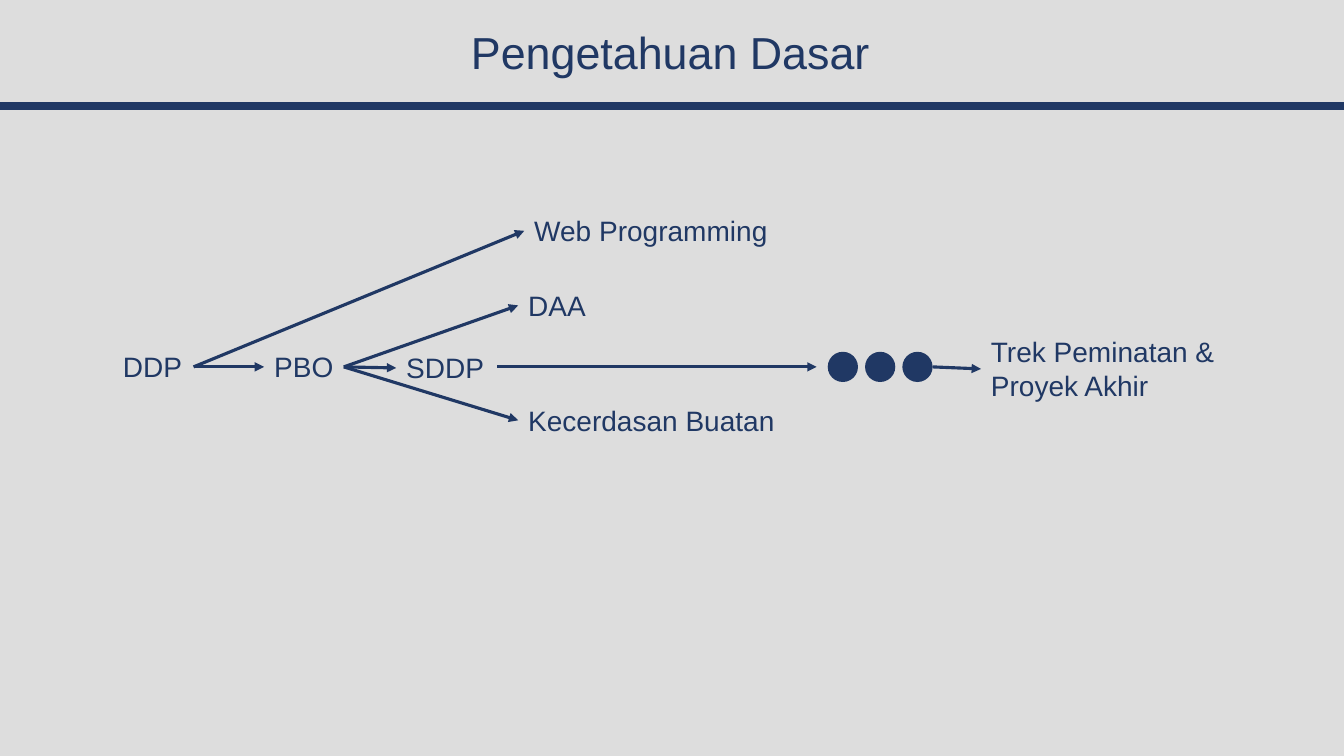
import dataclasses

import pptx
import pptx.dml.color
import pptx.enum.shapes
import pptx.enum.text
import pptx.oxml.xmlchemy
import pptx.slide
import pptx.util

PX = 9144  # 100 px to the inch
NAVY, GREY = "203864", "DDDDDD"
W, H = 1333, 750
AXIS = 364  # height of the main course path
DOT, DOT_STEP, DOT_LEFT = 30, 37, 821


@dataclasses.dataclass
class Label:
    text: str
    x: int
    y: int
    w: int
    h: int = 44


@dataclasses.dataclass
class Link:
    x1: int
    y1: int
    x2: int
    y2: int
    width: float = 2.25
    arrow: bool = True


TITLE = Label("Pengetahuan Dasar", 40, 20, 1250, 70)
COURSES = [
    Label("DDP", 112, 342, 80),
    Label("PBO", 262, 342, 79),
    Label("SDDP", 393, 343, 98),
    Label("DAA", 514, 281, 78),
    Label("Web Programming", 520, 207, 253),
    Label("Kecerdasan Buatan", 514, 395, 267),
    Label("Trek Peminatan &\nProyek Akhir", 973, 327, 244, 77),
]
LINKS = [
    Link(0, 105, W, 105, 6, False),
    Link(192, AXIS, 520, 229),
    Link(192, AXIS, 262, AXIS),
    Link(341, AXIS, 393, AXIS + 1),
    Link(341, AXIS, 514, 303),
    Link(341, AXIS, 514, 417),
    Link(493, AXIS, 810, AXIS),
    Link(925, AXIS, 973, 366),
]


def px(n: int) -> pptx.util.Emu:
    return pptx.util.Emu(n * PX)


def rgb(value: str) -> pptx.dml.color.RGBColor:
    return pptx.dml.color.RGBColor.from_string(value)


def add_label(
    slide: pptx.slide.Slide, label: Label, size: int, frame: dict, para: dict
) -> None:
    """Add a text box, with formats for its frame and for each paragraph."""
    sp = slide.shapes.add_textbox(*map(px, (label.x, label.y, label.w, label.h)))
    tf = sp.text_frame
    tf.text = label.text
    for name, value in frame.items():
        setattr(tf, name, value)
    for p in tf.paragraphs:
        for name, value in para.items():
            setattr(p, name, value)
        for r in p.runs:
            for name, value in {"name": "Arial", "size": pptx.util.Pt(size)}.items():
                setattr(r.font, name, value)
            r.font.color.rgb = rgb(NAVY)


def add_link(slide: pptx.slide.Slide, link: Link) -> None:
    sp = slide.shapes.add_connector(
        pptx.enum.shapes.MSO_CONNECTOR.STRAIGHT,
        *map(px, (link.x1, link.y1, link.x2, link.y2)),
    )
    sp.line.color.rgb = rgb(NAVY)
    sp.line.width = pptx.util.Pt(link.width)
    if link.arrow:
        tail = pptx.oxml.xmlchemy.OxmlElement("a:tailEnd")
        tail.set("type", "triangle")
        sp.line._get_or_add_ln().append(tail)
    sp._element.spPr.append(pptx.oxml.xmlchemy.OxmlElement("a:effectLst"))


def add_dot(slide: pptx.slide.Slide, x: int) -> None:
    sp = slide.shapes.add_shape(
        pptx.enum.shapes.MSO_SHAPE.OVAL, *map(px, (x, AXIS - DOT // 2, DOT, DOT))
    )
    sp.shadow.inherit = False
    sp.fill.solid()
    sp.fill.fore_color.rgb = rgb(NAVY)
    sp.line.fill.background()


def main() -> None:
    prs = pptx.Presentation()
    prs.slide_width, prs.slide_height = px(W), px(H)
    slide = prs.slides.add_slide(prs.slide_layouts[6])
    slide.background.fill.solid()
    slide.background.fill.fore_color.rgb = rgb(GREY)

    title_frame = {
        "word_wrap": True,
        "vertical_anchor": pptx.enum.text.MSO_ANCHOR.MIDDLE,
    }
    title_para = {"alignment": pptx.enum.text.PP_ALIGN.CENTER, "line_spacing": 0.9}
    course_frame = {
        "word_wrap": False,
        "auto_size": pptx.enum.text.MSO_AUTO_SIZE.SHAPE_TO_FIT_TEXT,
    }
    add_label(slide, TITLE, 32, title_frame, title_para)
    for course in COURSES:
        add_label(slide, course, 20, course_frame, {})
    for link in LINKS:
        add_link(slide, link)
    for i in range(3):
        add_dot(slide, DOT_LEFT + i * DOT_STEP)
    prs.save("out.pptx")


if __name__ == "__main__":
    main()
